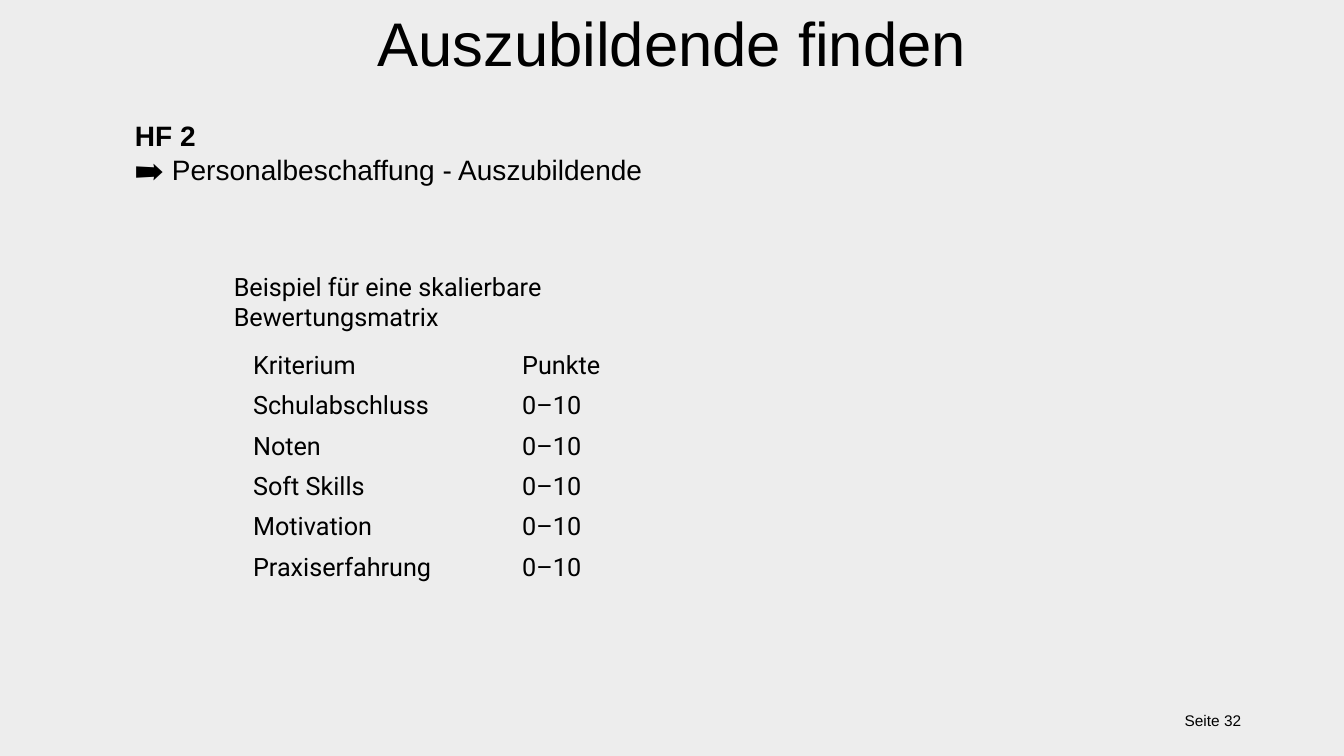
from pptx import Presentation
from pptx.dml.color import RGBColor
from pptx.enum.text import MSO_ANCHOR, PP_ALIGN
from pptx.util import Inches, Pt

LEFT, MID, RIGHT = PP_ALIGN.LEFT, PP_ALIGN.CENTER, PP_ALIGN.RIGHT
TOP, CENTER = MSO_ANCHOR.TOP, MSO_ANCHOR.MIDDLE
COLORS = {"ground": "EDEDED", "ink": "000000"}
PLAIN = "{2D5ABB26-0587-4C30-8999-92F81FD0307C}"

BOXES = [
    (["Auszubildende finden"], (3.17, 0, 6.99, 0.84), "Arial", 44, MID, TOP),
    (["HF 2", "➡️ Personalbeschaffung - Auszubildende"],
     (1.24, 1.13, 11.05, 0.77), "Arial", 20, LEFT, TOP),
    (["Seite 32"], (11.2, 6.95, 1.21, 0.4), "Arial", 11, RIGHT, CENTER),
    (["Beispiel für eine skalierbare Bewertungsmatrix"],
     (2.22, 2.64, 5.22, 0.4), "Roboto", 18, LEFT, TOP),
]
BOLD = {"HF 2"}
SCALE = "0–10"
TRAITS = ["Schulabschluss", "Noten", "Soft Skills", "Motivation", "Praxiserfahrung"]
ROWS = [("Kriterium", "Punkte")] + [(trait, SCALE) for trait in TRAITS]
COLS = [2.67, 1.76]
ROW_H = 0.4


def color(name):
    return RGBColor.from_string(COLORS[name])


def style(para, face, size, align=LEFT):
    para.alignment = align
    for run in para.runs:
        run.font.name = face
        run.font.size = Pt(size)
        run.font.bold = run.text in BOLD
        run.font.color.rgb = color("ink")


def add_text(slide, lines, area, face, size, align, anchor):
    frame = slide.shapes.add_textbox(*map(Inches, area)).text_frame
    frame.word_wrap = True
    frame.vertical_anchor = anchor
    frame.text = "\n".join(lines)
    for para in frame.paragraphs:
        style(para, face, size, align)


def add_matrix(slide):
    area = (2.41, 3.43, sum(COLS), ROW_H * len(ROWS))
    frame = slide.shapes.add_table(len(ROWS), len(COLS), *map(Inches, area))
    table = frame.table
    table.first_row = table.horz_banding = False
    table._tbl.tblPr[0].text = PLAIN
    for col, width in zip(table.columns, COLS):
        col.width = Inches(width)
    for row, texts in zip(table.rows, ROWS):
        row.height = Inches(ROW_H)
        for cell, text in zip(row.cells, texts):
            cell.fill.background()
            cell.vertical_anchor = CENTER
            cell.text_frame.text = text
            style(cell.text_frame.paragraphs[0], "Roboto", 18)


def main():
    deck = Presentation()
    deck.slide_width, deck.slide_height = Inches(13.33), Inches(7.5)
    slide = deck.slides.add_slide(deck.slide_layouts[6])
    slide.background.fill.solid()
    slide.background.fill.fore_color.rgb = color("ground")
    for box in BOXES:
        add_text(slide, *box)
    add_matrix(slide)
    deck.save("out.pptx")


if __name__ == "__main__":
    main()
